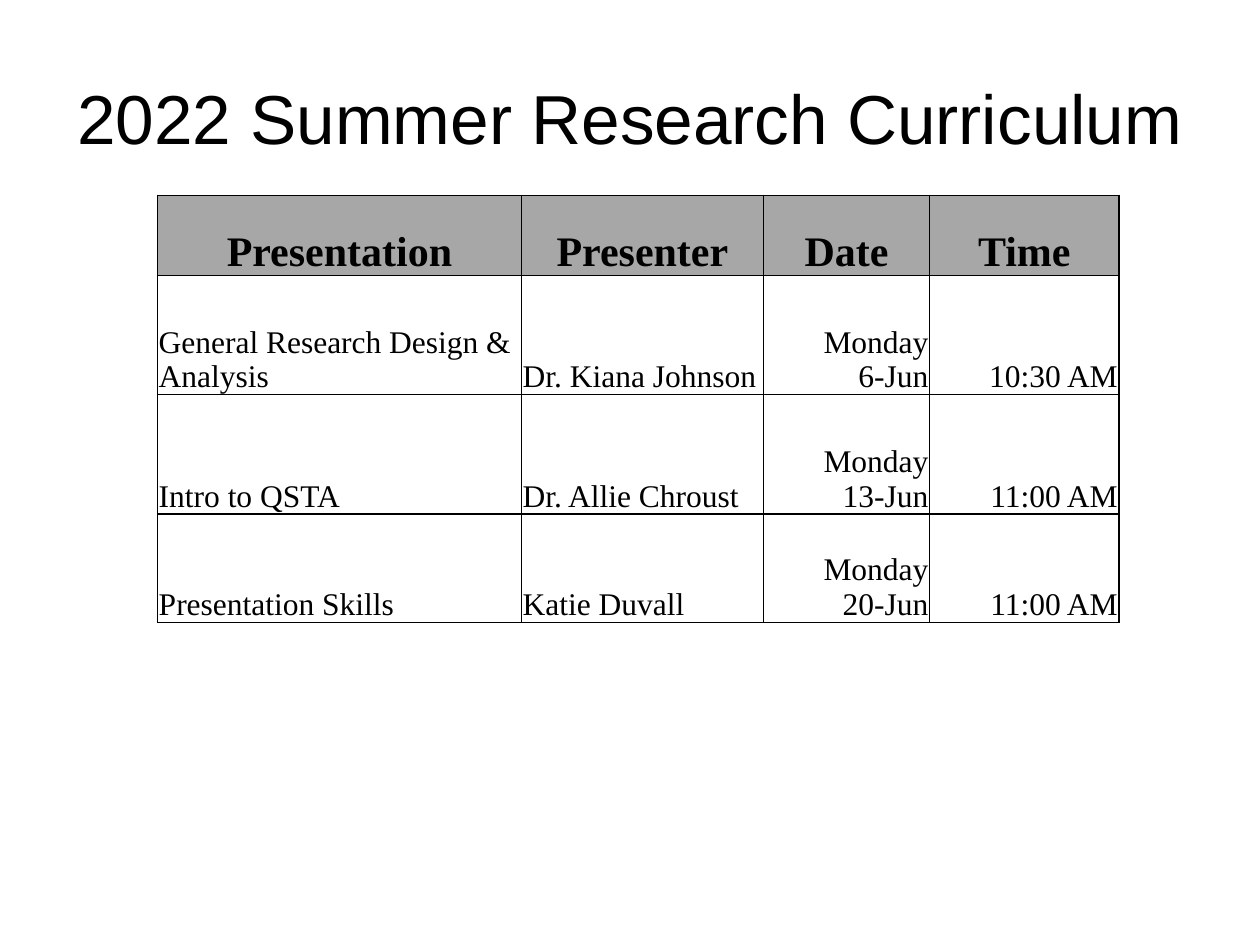
"""Build the summer research curriculum slide with its schedule table."""
from lxml.etree import SubElement
from pptx import Presentation
from pptx.dml.color import RGBColor as RGB
from pptx.enum.text import MSO_ANCHOR as Anchor, PP_ALIGN as Align
from pptx.oxml.ns import qn
from pptx.util import Pt

HEADING = "2022 Summer Research Curriculum"
SCHEDULE = [
    ("Presentation", "Presenter", "Date", "Time"),
    ("General Research Design & Analysis", "Dr. Kiana Johnson", "Monday\n6-Jun", "10:30 AM"),
    ("Intro to QSTA", "Dr. Allie Chroust", "Monday\n13-Jun", "11:00 AM"),
    ("Presentation Skills", "Katie Duvall", "Monday\n20-Jun", "11:00 AM"),
]
COLORS = {"text": "000000", "border": "000000", "header": "A7A7A7"}
COLUMN_WIDTHS = (208, 138.3, 95, 108.2)
ROW_HEIGHTS = (45.8, 68.2, 68.2, 61.9)
COLUMN_ALIGNS = (Align.LEFT, Align.LEFT, Align.RIGHT, Align.RIGHT)


def style_font(font, name, size, bold=False):
    font.name, font.size, font.bold = name, Pt(size), bold
    font.color.rgb = RGB.from_string(COLORS["text"])


def add_borders(cell):
    properties = cell._tc.get_or_add_tcPr()
    for position, side in enumerate(("lnL", "lnR", "lnT", "lnB")):
        border = SubElement(properties, qn(f"a:{side}"), w=str(Pt(1)))
        paint = SubElement(border, qn("a:solidFill"))
        SubElement(paint, qn("a:srgbClr"), val=COLORS["border"])
        properties.insert(position, border)


def fill_cell(cell, text, align, is_header):
    cell.text_frame.text = text
    cell.vertical_anchor = Anchor.BOTTOM
    cell.margin_left = cell.margin_right = cell.margin_top = Pt(0.72)
    cell.margin_bottom = 0
    for paragraph in cell.text_frame.paragraphs:
        paragraph.alignment = Align.CENTER if is_header else align
        for run in paragraph.runs:
            style_font(run.font, "Times New Roman", 24 if is_header else 18, is_header)
    if is_header:
        cell.fill.solid()
        cell.fill.fore_color.rgb = RGB.from_string(COLORS["header"])
    else:
        cell.fill.background()
    add_borders(cell)


def add_heading(slide):
    heading = slide.shapes.title
    heading.left, heading.top, heading.width, heading.height = Pt(36), Pt(21.6), Pt(648), Pt(90)
    frame = heading.text_frame
    frame.text = HEADING
    frame.word_wrap = True
    frame.vertical_anchor = Anchor.MIDDLE
    frame.margin_left = frame.margin_right = frame.margin_top = frame.margin_bottom = Pt(3.6)
    frame.paragraphs[0].alignment = Align.CENTER
    style_font(frame.paragraphs[0].runs[0].font, "Arial", 39.6)


def add_schedule(slide):
    schedule = slide.shapes.add_table(
        len(SCHEDULE), len(COLUMN_WIDTHS), Pt(90), Pt(111.6),
        Pt(sum(COLUMN_WIDTHS)), Pt(sum(ROW_HEIGHTS))).table
    schedule.first_row = schedule.horz_banding = False
    for column, width in zip(schedule.columns, COLUMN_WIDTHS):
        column.width = Pt(width)
    for index, (row, height, entries) in enumerate(zip(schedule.rows, ROW_HEIGHTS, SCHEDULE)):
        row.height = Pt(height)
        for cell, entry, align in zip(row.cells, entries, COLUMN_ALIGNS):
            fill_cell(cell, entry, align, index == 0)


def main():
    deck = Presentation()
    deck.slide_width, deck.slide_height = Pt(720), Pt(540)
    slide = deck.slides.add_slide(deck.slide_layouts[5])
    add_heading(slide)
    add_schedule(slide)
    deck.save("out.pptx")


if __name__ == "__main__":
    main()
